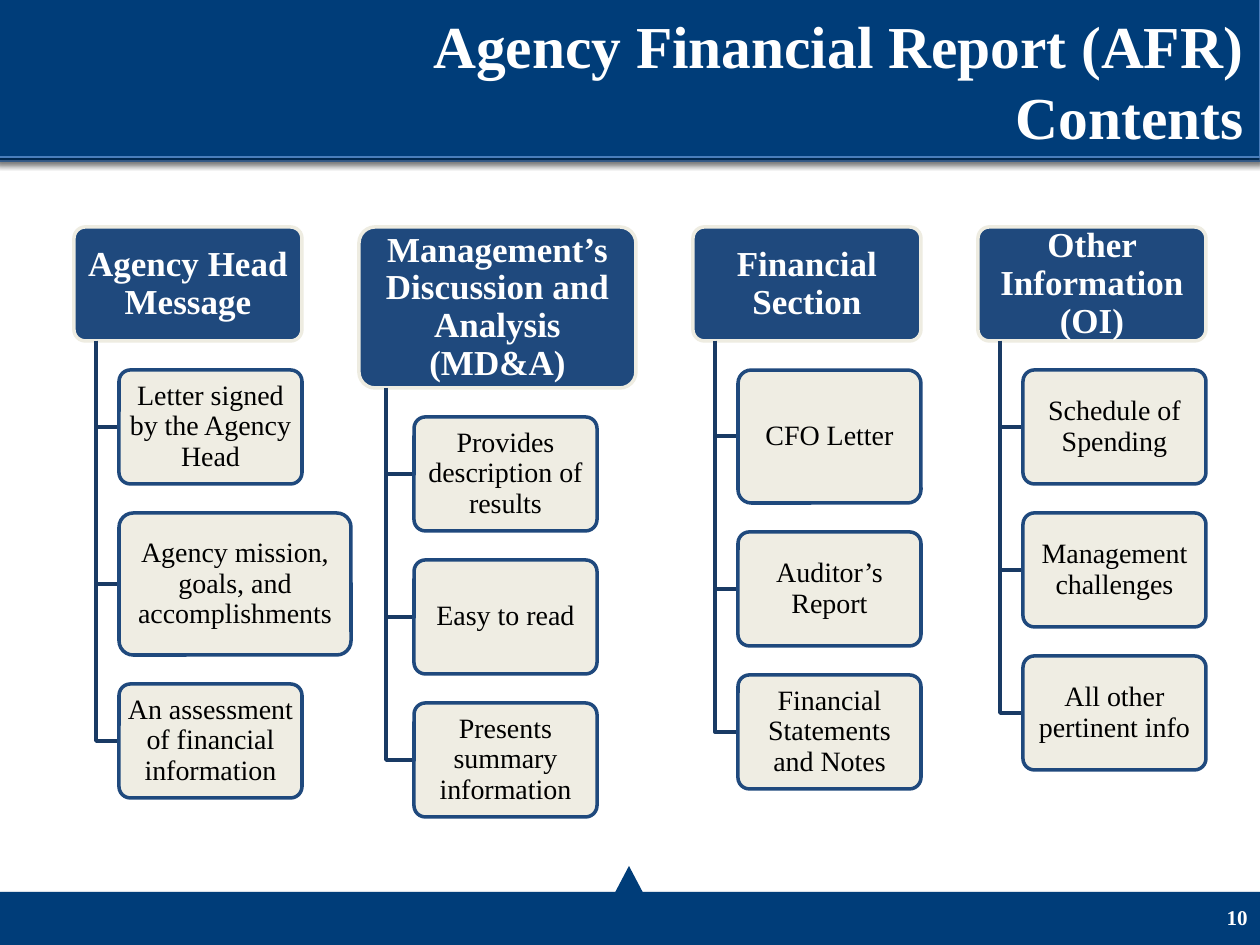
from lxml.etree import SubElement
from pptx import Presentation
from pptx.dml.color import RGBColor
from pptx.enum.shapes import MSO_SHAPE
from pptx.enum.text import MSO_ANCHOR, PP_ALIGN
from pptx.oxml.ns import qn
from pptx.util import Emu, Pt

FONT = "Times New Roman"
NAVY, BAR_EDGE = "003D79", "4A7EBB"
BLUE, CREAM, BRANCH = "1F497D", "EEECE1", "193A64"
WHITE, BLACK = "FFFFFF", "000000"
TOP, LEFT, COLUMN_GAP, ROW_GAP = 227, 74, 57, 29
HEADER_W, CHILD_W, BOX_H = 228, 183, 114

COLUMNS = [
    ("Agency Head Message", HEADER_W, BOX_H, [
        ("Letter signed by the Agency Head", CHILD_W, BOX_H),
        ("Agency mission, goals, and accomplishments", 232, 142),
        ("An assessment of financial information", CHILD_W, BOX_H)]),
    ("Management’s Discussion and Analysis (MD&A)", 277, 161, [
        ("Provides description of results", CHILD_W, BOX_H),
        ("Easy to read", CHILD_W, BOX_H),
        ("Presents summary information", CHILD_W, BOX_H)]),
    ("Financial Section", HEADER_W, BOX_H, [
        ("CFO Letter", CHILD_W, 133),
        ("Auditor’s Report", CHILD_W, BOX_H),
        ("Financial Statements and Notes", CHILD_W, BOX_H)]),
    ("Other Information (OI)", HEADER_W, BOX_H, [
        ("Schedule of Spending", CHILD_W, BOX_H),
        ("Management challenges", CHILD_W, BOX_H),
        ("All other pertinent info", CHILD_W, BOX_H)]),
]


def px(length):
    """Turn pixels into EMU."""
    return Emu(round(length * 914400 / 126))


def paint(color_format, color):
    """Set a colour from a hex string."""
    color_format.rgb = RGBColor.from_string(color)


def set_line(shape, color, width):
    """Give a shape a solid line, or none."""
    if color:
        paint(shape.line.color, color)
        shape.line.width = Pt(width)
    else:
        shape.line.fill.background()


def add_block(slide, preset, box, fill, edge=None, width=0.75):
    """Add a filled preset shape without a shadow."""
    block = slide.shapes.add_shape(preset, *map(px, box))
    block.shadow.inherit = False
    block.fill.solid()
    paint(block.fill.fore_color, fill)
    set_line(block, edge, width)
    return block


def add_bar(slide, box, edge=None):
    """Add a navy bar with a soft shadow below it."""
    bar = add_block(slide, MSO_SHAPE.RECTANGLE, box, NAVY, edge)
    effects = bar.element.spPr.find(qn("a:effectLst"))
    shadow = SubElement(effects, qn("a:outerShdw"), blurRad="40000",
                        dist="23000", dir="5400000", rotWithShape="0")
    tint = SubElement(shadow, qn("a:srgbClr"), val=BLACK)
    SubElement(tint, qn("a:alpha"), val="35000")


def write(shape, text, size, color, bold, align, spacing=None):
    """Put one formatted paragraph in a shape."""
    frame = shape.text_frame
    frame.word_wrap = True
    frame.vertical_anchor = MSO_ANCHOR.MIDDLE
    frame.text = text
    paragraph = frame.paragraphs[0]
    paragraph.alignment = align
    paragraph.line_spacing = spacing
    font = paragraph.runs[0].font
    font.name, font.size, font.bold = FONT, Pt(size), bold
    paint(font.color, color)


def add_banner(slide, left, top, width, height):
    """Draw the title banner and its title."""
    for offset in (4, 0):
        add_bar(slide, (left, top + offset, width, height), BAR_EDGE)
    title = slide.shapes.add_textbox(
        px(left + 328), px(top + 4), px(931), px(height - 2))
    write(title, "Agency Financial Report (AFR) Contents", 34, WHITE, True,
          PP_ALIGN.RIGHT)


def add_footer(slide, left, top, width, height):
    """Draw the footer bar with its pointer and page number."""
    add_bar(slide, (left, top, width, height))
    add_block(slide, MSO_SHAPE.ISOSCELES_TRIANGLE,
              (left + 609, top - 26, 40, 38), NAVY)
    number = slide.shapes.add_textbox(
        px(left + width - 294), px(top), px(294), px(50))
    write(number, "10", 12, WHITE, True, PP_ALIGN.RIGHT)


def add_card(slide, box, text, fill, edge, size, color, bold, inset):
    """Draw a rounded card with centred text."""
    card = add_block(slide, MSO_SHAPE.ROUNDED_RECTANGLE, box, fill, edge, 2)
    card.adjustments[0] = 0.1
    frame = card.text_frame
    frame.margin_left = frame.margin_right = px(inset)
    frame.margin_top = frame.margin_bottom = px(inset - 1)
    write(card, text, size, color, bold, PP_ALIGN.CENTER, 0.9)
    return card


def add_branch(slide, left, top, right, bottom):
    """Draw the elbow from a header down to one of its children."""
    builder = slide.shapes.build_freeform(px(left), px(top))
    builder.add_line_segments(
        [(px(left), px(bottom)), (px(right), px(bottom))], close=False)
    branch = builder.convert_to_shape()
    branch.shadow.inherit = False
    branch.fill.background()
    set_line(branch, BRANCH, 2)


def add_column(slide, left, top, width, height, heading, children):
    """Draw a header card with its children hanging below it."""
    add_card(slide, (left, top, width, height), heading, BLUE, CREAM,
             20, WHITE, True, 5)
    trunk, child_left = left + width // 10, left + width // 5
    bottom = top + height
    child_top = bottom + ROW_GAP
    for text, child_width, child_height in children:
        add_branch(slide, trunk, bottom, child_left,
                   child_top + child_height // 2)
        card = add_card(slide, (child_left, child_top, child_width,
                                child_height),
                        text, CREAM, BLUE, 16, BLACK, False, 4)
        tint = card.element.spPr.find(qn("a:solidFill"))[0]
        SubElement(tint, qn("a:alpha"), val="90000")
        child_top += child_height + ROW_GAP


def main():
    """Build and save the slide."""
    deck = Presentation()
    deck.slide_width, deck.slide_height = px(1260), px(945)
    slide = deck.slides.add_slide(deck.slide_layouts[6])
    add_footer(slide, 0, 892, 1260, 53)
    add_banner(slide, -3, -3, 1263, 160)
    left = LEFT
    for heading, width, height, children in COLUMNS:
        add_column(slide, left, TOP, width, height, heading, children)
        left += width + COLUMN_GAP
    deck.save("out.pptx")


if __name__ == "__main__":
    main()
